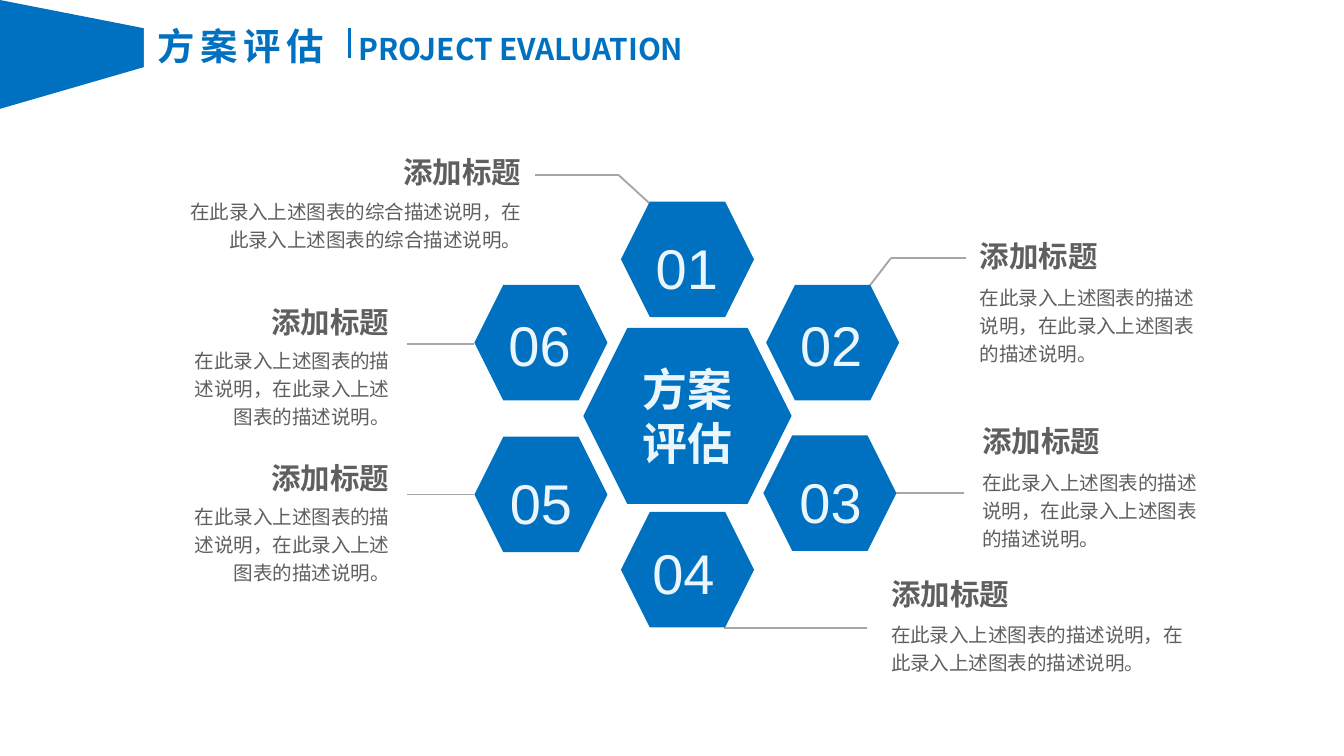
from lxml import etree
from pptx import Presentation
from pptx.dml.color import RGBColor
from pptx.enum.shapes import MSO_CONNECTOR, MSO_SHAPE
from pptx.enum.text import MSO_ANCHOR, MSO_AUTO_SIZE, PP_ALIGN
from pptx.oxml.ns import qn
from pptx.util import Inches, Pt

STRAIGHT = MSO_CONNECTOR.STRAIGHT
HEXAGON = MSO_SHAPE.HEXAGON
TOP = MSO_ANCHOR.TOP
FIT_SHAPE = MSO_AUTO_SIZE.SHAPE_TO_FIT_TEXT
LEFT, CENTER, RIGHT = PP_ALIGN.LEFT, PP_ALIGN.CENTER, PP_ALIGN.RIGHT

BLUE = RGBColor(0x00, 0x70, 0xC0)
PALE = RGBColor(0xEA, 0xF5, 0xFC)
GRAY = RGBColor(0x5F, 0x5F, 0x5F)
LINE_GRAY = RGBColor(0xA6, 0xA6, 0xA6)
WHITE = RGBColor(0xFF, 0xFF, 0xFF)
CJK, LATIN = "Noto Sans CJK SC", "Arial"

PAGE_WIDTH = Inches(10)
PAGE_HEIGHT = PAGE_WIDTH * 9 // 16

BANNER = [(0, 0), (1.07, 0.21), (1.07, 0.5), (0, 0.81)]
# text, box, size, letter spacing in points
TITLES = [
    ("方案评估", (1.07, 0.12, 1.49, 0.44), 20, 3),
    ("PROJECT EVALUATION", (2.57, 0.18, 2.75, 0.37), 16, 0),
]
TITLE_RULE = [(2.6, 0.21), (2.6, 0.43)]

HEXAGON_SIZE = (0.99, 0.86)
# number, hexagon corner, number box, line spacing
STEPS = [
    ("01", (4.62, 1.5), (4.75, 1.59, 0.72, 0.65), 1.2),
    ("02", (5.7, 2.12), (5.85, 2.26, 0.67, 0.61), 1),
    ("03", (5.68, 3.24), (5.8, 3.33, 0.76, 0.65), 1.2),
    ("04", (4.62, 3.81), (4.75, 3.96, 0.67, 0.61), 1),
    ("05", (3.53, 3.25), (3.69, 3.34, 0.67, 0.65), 1.2),
    ("06", (3.53, 2.12), (3.68, 2.26, 0.67, 0.61), 1),
]
LEADERS = [
    [(4.83, 1.51), (4.6, 1.3), (3.98, 1.3)],
    [(6.46, 2.14), (6.63, 1.92), (7.19, 1.92)],
    [(7.17, 3.67), (6.67, 3.67)],
    [(5.39, 4.67), (6.45, 4.67)],
    [(3.53, 3.68), (3.03, 3.68)],
    [(3.53, 2.56), (3.03, 2.56)],
]
CENTER_HEXAGON = (4.34, 2.44, 1.55, 1.31)
CENTER_LABEL = (4.64, 2.64, 0.95, 0.91)
CENTER_WORDS = ["方案", "评估"]

HEADING = "添加标题"
HEADING_SIZE = (1.03, 0.34)
SHORT = "在此录入上述图表的描述说明，在此录入上述图表的描述说明。"
LONG = "在此录入上述图表的综合描述说明，在此录入上述图表的综合描述说明。"
NOTE_INSETS = (0.07, 0.04)
# alignment, outer edge beside the diagram, heading top, body top, body size, body
NOTES = [
    (RIGHT, 3.95, 1.11, 1.41, (2.7, 0.5), LONG),
    (LEFT, 7.22, 1.73, 2.05, (1.76, 0.71), SHORT),
    (LEFT, 7.24, 3.11, 3.43, (1.76, 0.71), SHORT),
    (LEFT, 6.56, 4.25, 4.56, (2.34, 0.5), SHORT),
    (RIGHT, 2.97, 3.38, 3.68, (1.64, 0.71), SHORT),
    (RIGHT, 2.97, 2.22, 2.52, (1.64, 0.71), SHORT),
]


def inches(values):
    return [Inches(value) for value in values]


def paint_blue(shape):
    shape.shadow.inherit = False
    shape.fill.solid()
    shape.fill.fore_color.rgb = BLUE
    shape.line.fill.background()


def add_path(slide, points, color, width):
    """Join successive points with straight connectors."""
    for start, end in zip(points, points[1:]):
        line = slide.shapes.add_connector(STRAIGHT, *inches(start + end))
        line.line.color.rgb = color
        line.line.width = Pt(width)
        etree.SubElement(line._element.spPr, qn("a:effectLst"))


def add_text(slide, place, lines, size, color, font=CJK, bold=False, align=LEFT,
             spacing=1, insets=(0.1, 0.05), wrap=True, tracking=0):
    box = slide.shapes.add_textbox(*inches(place))
    frame = box.text_frame
    frame.word_wrap = wrap
    frame.auto_size = FIT_SHAPE
    frame.vertical_anchor = TOP
    frame.margin_left = frame.margin_right = Inches(insets[0])
    frame.margin_top = frame.margin_bottom = Inches(insets[1])
    for index, text in enumerate(lines):
        para = frame.add_paragraph() if index else frame.paragraphs[0]
        para.alignment = align
        para.line_spacing = float(spacing)
        span = para.add_run()
        span.text = text
        span.font.size = Pt(size)
        span.font.bold = bold
        span.font.color.rgb = color
        span.font.name = font
        properties = span._r.get_or_add_rPr()
        etree.SubElement(properties, qn("a:ea"), typeface=font)
        if tracking:
            properties.set("spc", str(tracking * 100))
    return box


def add_hexagon(slide, place):
    paint_blue(slide.shapes.add_shape(HEXAGON, *inches(place)))


def add_note(slide, align, edge, heading_top, body_top, body_size, body):
    def place(top, size):
        left = edge - size[0] if align == RIGHT else edge
        return (left, top, *size)

    add_text(slide, place(heading_top, HEADING_SIZE), [HEADING], 15.8, GRAY,
             bold=True, align=align, insets=NOTE_INSETS, wrap=False)
    add_text(slide, place(body_top, body_size), [body], 10.5, GRAY,
             align=align, spacing=1.2, insets=NOTE_INSETS)


def main():
    deck = Presentation()
    deck.slide_width, deck.slide_height = PAGE_WIDTH, PAGE_HEIGHT
    page = deck.slides.add_slide(deck.slide_layouts[6])

    corners = [inches(point) for point in BANNER]
    builder = page.shapes.build_freeform(*corners[0])
    builder.add_line_segments(corners[1:], close=True)
    paint_blue(builder.convert_to_shape())

    for text, place, size, tracking in TITLES:
        title = add_text(page, place, [text], size, BLUE, bold=True,
                         wrap=False, tracking=tracking)
        title.fill.solid()
        title.fill.fore_color.rgb = WHITE
    add_path(page, TITLE_RULE, BLUE, 1.5)

    for points in LEADERS:
        add_path(page, points, LINE_GRAY, 1)
    for number, corner, place, spacing in STEPS:
        add_hexagon(page, corner + HEXAGON_SIZE)
        add_text(page, place, [number], 30, PALE, font=LATIN, align=CENTER,
                 spacing=spacing)
    for note in NOTES:
        add_note(page, *note)

    add_hexagon(page, CENTER_HEXAGON)
    add_text(page, CENTER_LABEL, CENTER_WORDS, 24, PALE, bold=True, align=CENTER)
    deck.save("out.pptx")


if __name__ == "__main__":
    main()
